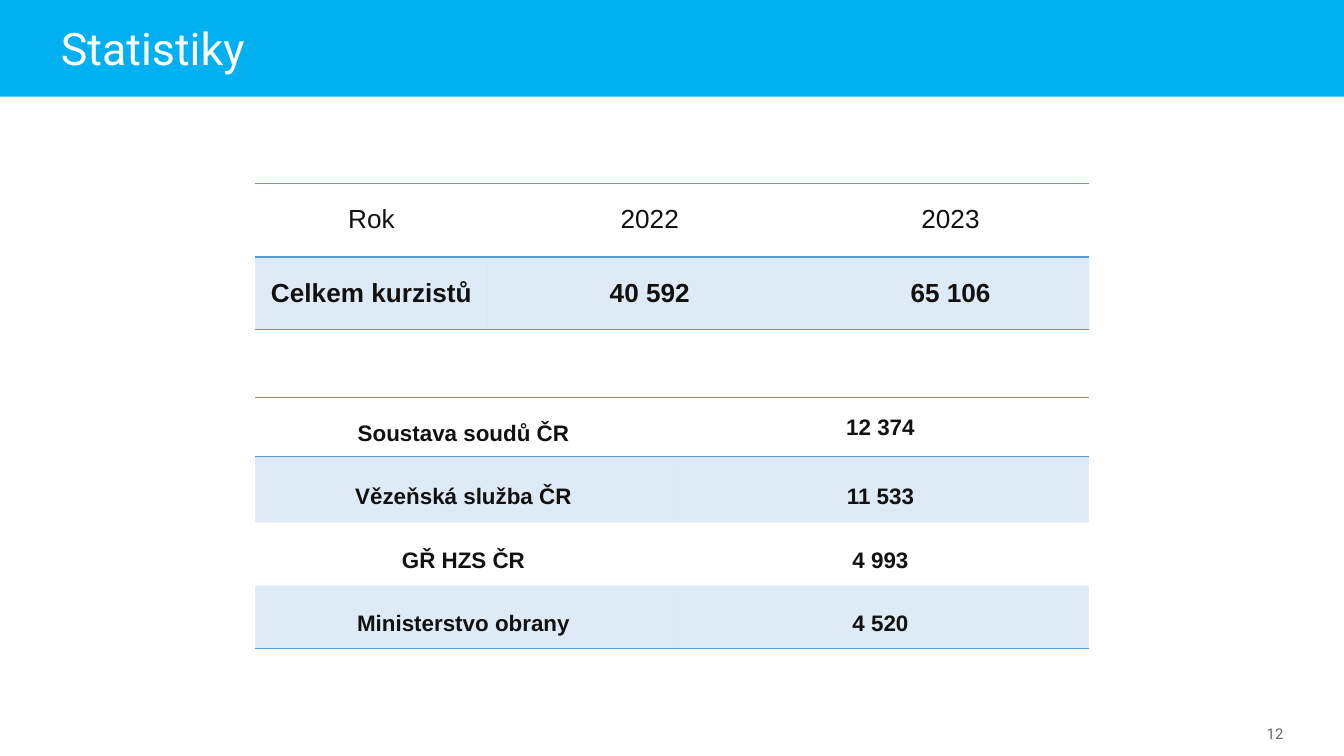
import pptx
import pptx.util
import pptx.dml.color
import pptx.enum.shapes
import pptx.enum.text
from lxml import etree
from pptx.oxml.ns import qn

Cm, Pt = pptx.util.Cm, pptx.util.Pt
ALIGN = pptx.enum.text.PP_ALIGN
ANCHOR = pptx.enum.text.MSO_ANCHOR

BLUE, BAND, DARK = "00B0F0", "5B9BD5", "111111"
TITLE, PAGE = "Statistiky", "12"

# Each row: cell texts, height in cm, bold, banded
TOTALS = [
    (("Rok", "2022", "2023"), 1.39, False, False),
    (("Celkem kurzistů", "40 592", "65 106"), 1.37, True, True),
]
ORGANISATIONS = [
    (("Soustava soudů ČR", "12 374"), 1.12, True, False),
    (("Vězeňská služba ČR", "11 533"), 1.25, True, True),
    (("GŘ HZS ČR", "4 993"), 1.19, True, False),
    (("Ministerstvo obrany", "4 520"), 1.19, True, True),
]
TABLE_LEFT = 4.82


def rgb(value):
    return pptx.dml.color.RGBColor.from_string(value)


def write(tf, text, size, color, font="Roboto", bold=False, align=ALIGN.LEFT, spacing=1.0):
    p = tf.paragraphs[0]
    p.alignment, p.line_spacing = align, spacing
    p.space_before = Pt(0)
    r = p.add_run()
    r.text = text
    r.font.size, r.font.name, r.font.bold = Pt(size), font, bold
    r.font.color.rgb = rgb(color)


def set_frame(tf, anchor):
    tf.word_wrap = True
    tf.auto_size = pptx.enum.text.MSO_AUTO_SIZE.NONE
    tf.vertical_anchor = anchor
    tf.margin_left = tf.margin_right = Cm(0.18)
    tf.margin_top = tf.margin_bottom = Cm(0.1)


def format_cell(cell, banded, top, bottom):
    """Set the rules above and below the cell and its translucent band."""
    tcPr = cell._tc.get_or_add_tcPr()
    for tag, shown in (("a:lnL", False), ("a:lnR", False), ("a:lnT", top), ("a:lnB", bottom)):
        ln = etree.SubElement(tcPr, qn(tag), w=str(Pt(1)))
        if shown:
            fill = etree.SubElement(ln, qn("a:solidFill"))
            etree.SubElement(fill, qn("a:srgbClr"), val=BAND)
        else:
            etree.SubElement(ln, qn("a:noFill"))
    if banded:
        cell.fill.solid()
        cell.fill.fore_color.rgb = rgb(BAND)
        color = tcPr.find(qn("a:solidFill")).find(qn("a:srgbClr"))
        etree.SubElement(color, qn("a:alpha"), val="20000")
    else:
        cell.fill.background()


def add_table(s, rows, top, widths, size, anchor, tight=False):
    """Add a table ruled around its first row and below its last; tight removes insets."""
    heights = [height for _, height, _, _ in rows]
    table = s.shapes.add_table(len(rows), len(widths), Cm(TABLE_LEFT), Cm(top),
                               Cm(sum(widths)), Cm(sum(heights))).table
    table.first_row = table.horz_banding = False
    for column, width in zip(table.columns, widths):
        column.width = Cm(width)
    for i, (texts, height, bold, banded) in enumerate(rows):
        table.rows[i].height = Cm(height)
        for j, text in enumerate(texts):
            cell = table.cell(i, j)
            first_value = tight and i == 0 and j == 1
            if tight and (i or j):
                cell.margin_left = cell.margin_right = cell.margin_top = Cm(0.02)
                cell.margin_bottom = 0
            cell.vertical_anchor = anchor
            write(cell.text_frame, text, size, DARK, "Arial", bold, ALIGN.CENTER,
                  1.0 if first_value else 1.5)
            format_cell(cell, banded, i <= 1, i in (0, len(rows) - 1))


prs = pptx.Presentation()
prs.slide_width, prs.slide_height = Cm(25.4), Cm(14.29)
s = prs.slides.add_slide(prs.slide_layouts[5])

bar = s.shapes.add_shape(pptx.enum.shapes.MSO_SHAPE.RECTANGLE, 0, 0, prs.slide_width, Cm(1.83))
bar.shadow.inherit = False
bar.fill.solid()
bar.fill.fore_color.rgb = rgb(BLUE)
bar.line.fill.background()
s.shapes._spTree.insert(2, bar._element)  # behind the title

title = s.shapes.title
title.left, title.top, title.width, title.height = Cm(0.97), Cm(0.3), Cm(17.58), Cm(1.27)
set_frame(title.text_frame, ANCHOR.TOP)
write(title.text_frame, TITLE, 24, "FFFFFF")

number = s.shapes.add_textbox(Cm(22.61), Cm(13.49), Cm(1.83), Cm(0.76))
set_frame(number.text_frame, ANCHOR.MIDDLE)
write(number.text_frame, PAGE, 8, "666666", align=ALIGN.RIGHT)

add_table(s, TOTALS, 3.47, (4.4, 6.12, 5.25), 14, ANCHOR.TOP)
add_table(s, ORGANISATIONS, 7.51, (7.88, 7.88), 12, ANCHOR.MIDDLE, tight=True)

prs.save("out.pptx")
